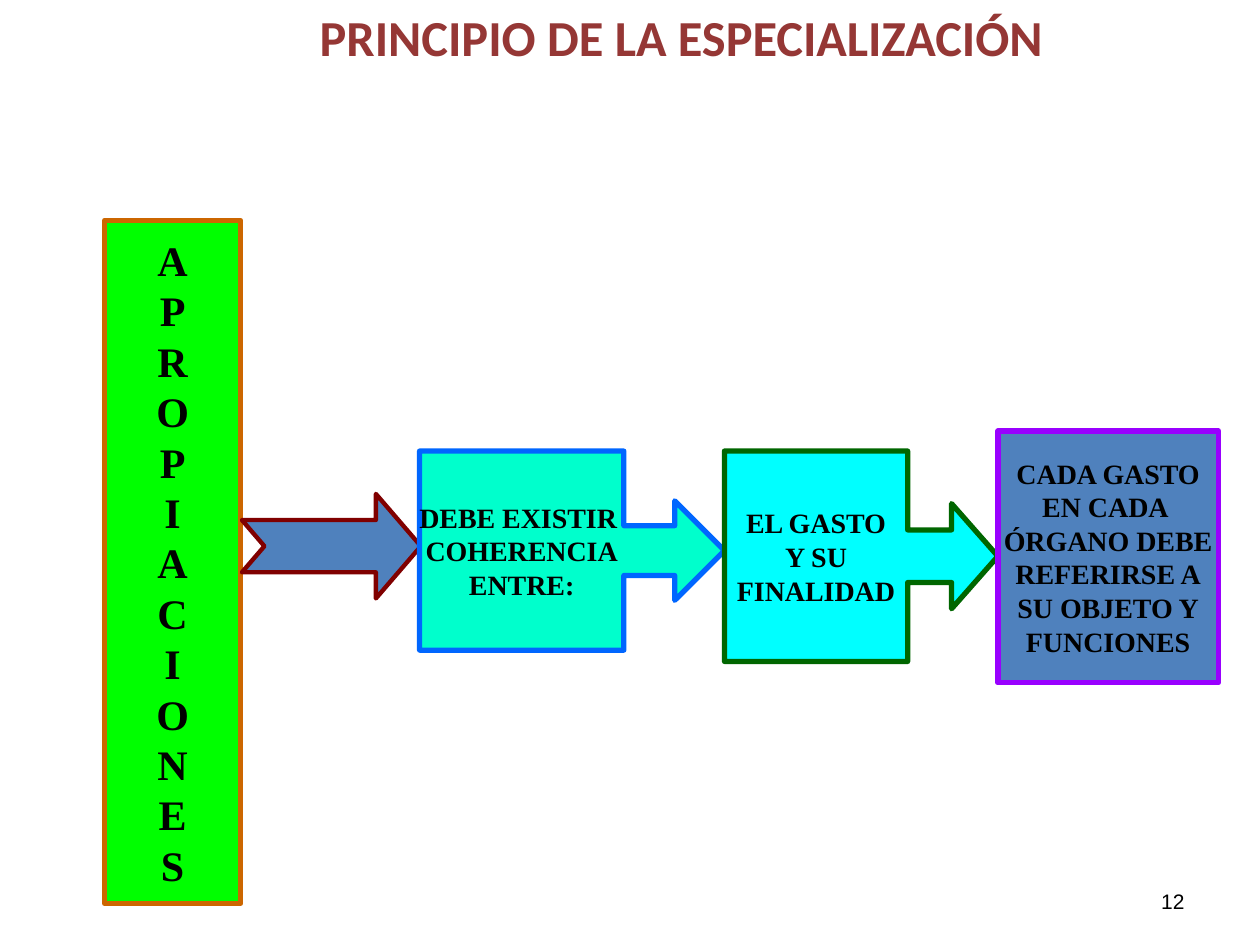
from dataclasses import dataclass

from pptx import Presentation
from pptx.dml.color import RGBColor
from pptx.enum.shapes import MSO_SHAPE
from pptx.enum.text import MSO_ANCHOR, PP_ALIGN
from pptx.util import Inches, Pt


@dataclass(frozen=True)
class Theme:
    title: str = "953735"
    text: str = "000000"
    green: str = "00FF00"
    orange: str = "CC6600"
    blue: str = "4F81BD"
    maroon: str = "800000"
    turquoise: str = "00FFCC"
    azure: str = "0066FF"
    cyan: str = "00FFFF"
    dark_green: str = "006600"
    violet: str = "9900FF"
    title_size: float = 28.8
    letter_size: float = 24
    box_size: float = 16
    number_size: float = 12


theme = Theme()


def write(sp, lines, size, font="Times New Roman", color=theme.text, bold=True,
          align=PP_ALIGN.CENTER, wrap=False):
    """Put one paragraph per line, vertically centred, into a shape."""
    tf = sp.text_frame
    tf.word_wrap = wrap
    tf.vertical_anchor = MSO_ANCHOR.MIDDLE
    for i, line in enumerate(lines):
        p = tf.paragraphs[0] if i == 0 else tf.add_paragraph()
        p.alignment = align
        r = p.add_run()
        r.text = line
        for name, value in {"name": font, "size": Pt(size), "bold": bold}.items():
            setattr(r.font, name, value)
        r.font.color.rgb = RGBColor.from_string(color)


prs = Presentation()
prs.slide_width, prs.slide_height = Inches(10), Inches(7.5)
s = prs.slides.add_slide(prs.slide_layouts[6])

labels = [
    ((1.16, 0.08, 8.5, 0.42), ["PRINCIPIO DE LA ESPECIALIZACIÓN"],
     {"size": theme.title_size, "font": "Calibri", "color": theme.title}),
    ((7.17, 6.95, 2.33, 0.4), ["12"],
     {"size": theme.number_size, "font": "Arial", "bold": False,
      "align": PP_ALIGN.RIGHT}),
]
for box, lines, style in labels:
    sp = s.shapes.add_textbox(*map(Inches, box))
    write(sp, lines, wrap=True, **style)

# preset, box, adjustments, fill, line, line width, text lines, text size
flow = [
    (MSO_SHAPE.RECTANGLE, (0.83, 1.75, 1.08, 5.42), (),
     theme.green, theme.orange, 3, "APROPIACIONES", theme.letter_size),
    (MSO_SHAPE.NOTCHED_RIGHT_ARROW, (1.92, 3.92, 1.42, 0.83), (0.5, 0.43),
     theme.blue, theme.maroon, 2.5, (), theme.box_size),
    (MSO_SHAPE.RIGHT_ARROW_CALLOUT, (3.33, 3.58, 2.42, 1.58),
     (0.25, 0.25, 0.25, 0.67), theme.turquoise, theme.azure, 3,
     ("DEBE EXISTIR ", "COHERENCIA", "ENTRE:"), theme.box_size),
    (MSO_SHAPE.RIGHT_ARROW_CALLOUT, (5.75, 3.58, 2.17, 1.67),
     (0.25, 0.25, 0.22, 0.67), theme.cyan, theme.dark_green, 3,
     ("EL GASTO", "Y SU", "FINALIDAD"), theme.box_size),
    (MSO_SHAPE.RECTANGLE, (7.92, 3.42, 1.75, 2), (),
     theme.blue, theme.violet, 3,
     ("CADA GASTO", "EN CADA ", "ÓRGANO DEBE", "REFERIRSE A",
      "SU OBJETO Y", "FUNCIONES"), theme.box_size),
]
for preset, box, adjustments, fill, line, width, lines, size in flow:
    sp = s.shapes.add_shape(preset, *map(Inches, box))
    sp.shadow.inherit = False
    for i, value in enumerate(adjustments):
        sp.adjustments[i] = value
    sp.fill.solid()
    sp.fill.fore_color.rgb = RGBColor.from_string(fill)
    sp.line.color.rgb = RGBColor.from_string(line)
    sp.line.width = Pt(width)
    write(sp, lines, size)

prs.save("out.pptx")
